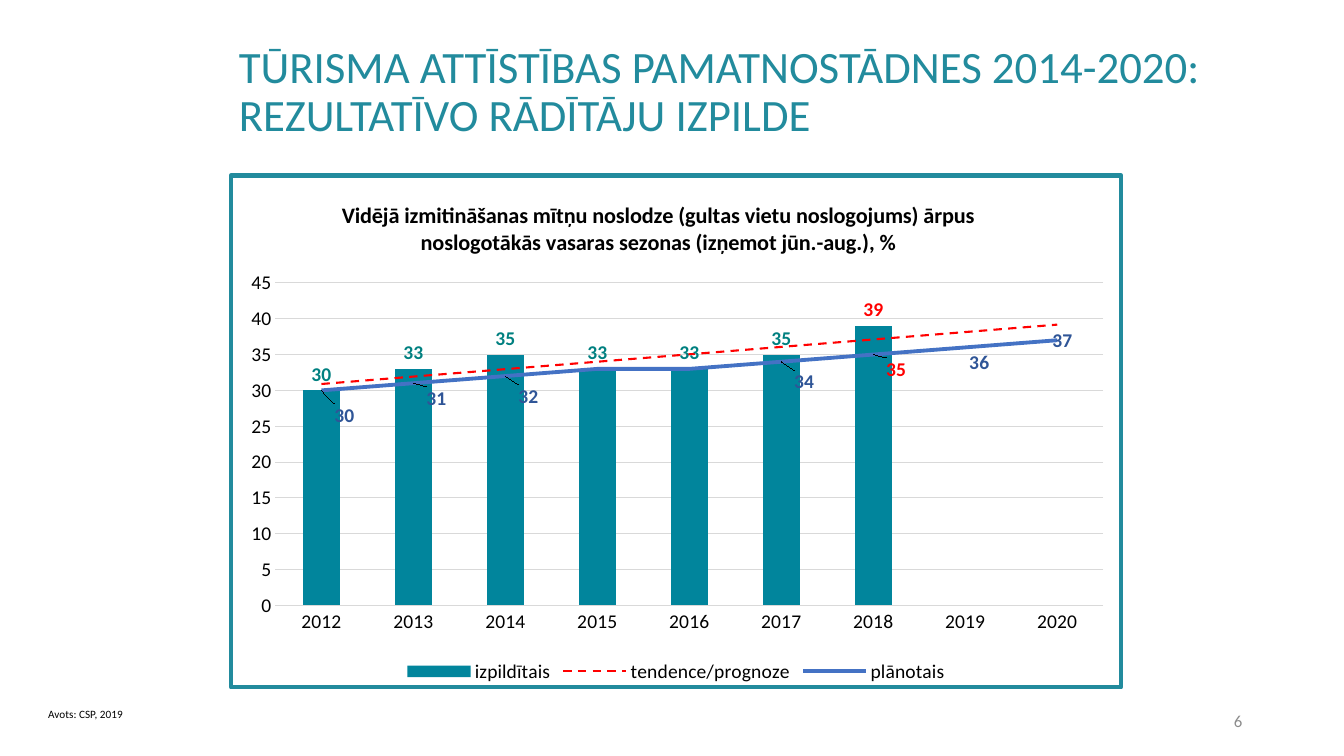
from lxml import etree
from pptx import Presentation
from pptx import util as u
from pptx.chart.data import CategoryChartData
from pptx.dml.color import RGBColor
from pptx.enum import chart as charts, text
from pptx.oxml import parse_xml
from pptx.oxml.ns import nsdecls, qn

PX = 9144  # EMU in one px, 100 px to the inch
FONT = "Calibri"
TEAL = "228B9D"
BLACK = "000000"
RED = "FF0000"
LABEL_BLUE = "2F5597"

TITLE = ("TŪRISMA ATTĪSTĪBAS PAMATNOSTĀDNES 2014-2020:\v"
         "REZULTATĪVO RĀDĪTĀJU IZPILDE")
CHART_TITLE = ("Vidējā izmitināšanas mītņu noslodze (gultas vietu noslogojums) "
               "ārpus noslogotākās vasaras sezonas (izņemot jūn.-aug.), %")
YEARS = [str(year) for year in range(2012, 2021)]
ACTUAL = [30, 33, 35, 33, 33, 35, 39, None, None]
PLANNED = [30, 31, 32, 33, 33, 34, 35, 36, 37]
# Label shift of each planned value, as a share of the chart; None hides it
PLANNED_SHIFTS = [(0.01, 0.05), (0.01, 0.03), (0.01, 0.04), None, None,
                  (0.01, 0.04), (0.01, 0.03), (0, 0.03), (-0.01, 0)]
FORECAST_YEAR = YEARS.index("2018")


def px(*lengths):
    return [u.Emu(length * PX) for length in lengths]


def color(hex_string):
    return RGBColor.from_string(hex_string)


def style_font(font, size, hex_string, bold=False):
    font.name = FONT
    font.size = u.Pt(size)
    font.bold = bold
    font.color.rgb = color(hex_string)


def add_text(slide, box, content, size, hex_string, anchor=text.MSO_ANCHOR.TOP,
             align=text.PP_ALIGN.LEFT, spacing=None):
    frame = slide.shapes.add_textbox(*px(*box)).text_frame
    frame.word_wrap = True
    frame.vertical_anchor = anchor
    frame.text = content
    paragraph = frame.paragraphs[0]
    paragraph.alignment = align
    paragraph.line_spacing = spacing
    for run in paragraph.runs:
        style_font(run.font, size, hex_string)


def chart_xml(tag, body):
    return parse_xml(f'<c:{tag} {nsdecls("c", "a")}>{body}</c:{tag}>')


def line_xml(hex_string, width, dash="solid"):
    return (f'<a:ln w="{u.Pt(width)}"><a:solidFill><a:srgbClr val="{hex_string}"/>'
            f'</a:solidFill><a:prstDash val="{dash}"/></a:ln>')


def remove_children(element, tag):
    for child in element.findall(qn(tag)):
        element.remove(child)


def layout(x, y, *size, edge=False, inner=False):
    """Manual layout in shares of the chart; edge means absolute, not shifted."""
    body = '<c:layoutTarget val="inner"/>' if inner else ""
    if edge:
        body += '<c:xMode val="edge"/><c:yMode val="edge"/>'
    for name, value in zip("xywh", (x, y, *size)):
        body += f'<c:{name} val="{value}"/>'
    return chart_xml("layout", f"<c:manualLayout>{body}</c:manualLayout>")


def move_to_line_plot(chart):
    """Turn the last column series into a line on the same axes."""
    bar_chart = chart.plots[0]._element
    series = bar_chart.findall(qn("c:ser"))[-1]
    remove_children(series, "c:invertIfNegative")
    line_chart = chart_xml("lineChart", '<c:grouping val="standard"/>'
                           '<c:varyColors val="0"/>')
    line_chart.append(series)
    etree.SubElement(line_chart, qn("c:marker")).set("val", "1")
    for axis in bar_chart.findall(qn("c:axId")):
        etree.SubElement(line_chart, qn("c:axId")).set("val", axis.get("val"))
    bar_chart.addnext(line_chart)


def add_trend(series, name):
    trend = chart_xml("trendline", f"<c:name>{name}</c:name><c:spPr>"
                      f'{line_xml(RED, 1.5, "dash")}</c:spPr>'
                      '<c:trendlineType val="linear"/><c:dispRSqr val="0"/>'
                      '<c:dispEq val="0"/>')
    series._element.find(qn("c:cat")).addprevious(trend)


def show_values(series, hex_string, position):
    labels = series.data_labels
    labels.show_value = True
    labels.position = position
    style_font(labels.font, 14, hex_string, True)


def style_point_label(series, index, hex_string, position, shift=None):
    label = series.points[index].data_label
    style_font(label.font, 14, hex_string, True)
    label.position = position
    if shift:
        element = series._element.find(qn("c:dLbls")).findall(qn("c:dLbl"))[-1]
        element.find(qn("c:idx")).addnext(layout(*shift))


def hide_point_label(series, index):
    hidden = chart_xml("dLbl", f'<c:idx val="{index}"/><c:delete val="1"/>')
    series._element.find(qn("c:dLbls")).findall(qn("c:dLbl"))[-1].addnext(hidden)


def style_axes(chart):
    for axis in (chart.category_axis, chart.value_axis):
        axis.major_tick_mark = charts.XL_TICK_MARK.NONE
        axis.minor_tick_mark = charts.XL_TICK_MARK.NONE
        style_font(axis.tick_labels.font, 14, BLACK)
    category_line = chart.category_axis.format.line
    category_line.color.rgb = color("D9D9D9")
    category_line.width = u.Pt(1)
    values = chart.value_axis
    values.format.line.fill.background()
    values.minimum_scale, values.maximum_scale, values.major_unit = 0, 45, 5
    values.tick_labels.number_format = "#,##0"
    values.tick_labels.number_format_is_linked = False
    grid = values.major_gridlines.format.line
    grid.color.rgb = color("D9D9D9")
    grid.width = u.Pt(0.75)


def style_frame(chart):
    """Title, legend, plot area and border."""
    title = chart.chart_title
    title.text_frame.text = CHART_TITLE
    style_font(title.text_frame.paragraphs[0].runs[0].font, 16, BLACK, True)
    remove_children(title._element, "c:layout")
    title._element.find(qn("c:tx")).addnext(layout(0.12, 0.04, edge=True))

    chart.has_legend = True
    chart.legend.position = charts.XL_LEGEND_POSITION.BOTTOM
    chart.legend.include_in_layout = False
    style_font(chart.legend.font, 14, BLACK)

    plot_area = chart._chartSpace.chart.plotArea
    remove_children(plot_area, "c:layout")
    plot_area.insert(0, layout(0.05, 0.21, 0.93, 0.63, edge=True, inner=True))
    border = chart_xml("spPr", "<a:noFill/>" + line_xml(TEAL, 3))
    chart._chartSpace.chart.addnext(border)


def add_occupancy_chart(slide, box):
    data = CategoryChartData(number_format="General")
    data.categories = YEARS
    data.add_series("izpildītais", ACTUAL)
    data.add_series("plānotais", PLANNED)
    chart = slide.shapes.add_chart(
        charts.XL_CHART_TYPE.COLUMN_CLUSTERED, *px(*box), data).chart
    style_font(chart.font, 14, BLACK)
    style_axes(chart)
    style_frame(chart)
    move_to_line_plot(chart)

    columns, line = chart.plots
    columns.gap_width = 150
    columns.vary_by_categories = False
    actual, planned = columns.series[0], line.series[0]

    above = charts.XL_LABEL_POSITION.OUTSIDE_END
    actual.format.fill.solid()
    actual.format.fill.fore_color.rgb = color("01859C")
    show_values(actual, "008080", above)
    style_point_label(actual, FORECAST_YEAR, RED, above)
    add_trend(actual, "tendence/prognoze")

    beside = charts.XL_LABEL_POSITION.RIGHT
    planned.smooth = False
    planned.marker.style = charts.XL_MARKER_STYLE.NONE
    planned.format.line.color.rgb = color("4472C4")
    planned.format.line.width = u.Pt(2.75)
    show_values(planned, LABEL_BLUE, beside)
    for index, shift in enumerate(PLANNED_SHIFTS):
        if shift is None:
            hide_point_label(planned, index)
        else:
            label_color = RED if index == FORECAST_YEAR else LABEL_BLUE
            style_point_label(planned, index, label_color, beside, shift)


def main():
    presentation = Presentation()
    presentation.slide_width, presentation.slide_height = px(1333, 750)
    slide = presentation.slides.add_slide(presentation.slide_layouts[6])
    add_text(slide, (942, 695, 300, 40), "6", 12, "8C8C8C",
             text.MSO_ANCHOR.MIDDLE, text.PP_ALIGN.RIGHT)
    add_occupancy_chart(slide, (227, 172, 887, 512))
    add_text(slide, (227, 0, 1150, 145), TITLE, 32, TEAL,
             text.MSO_ANCHOR.BOTTOM, spacing=0.9)
    add_text(slide, (38, 697, 160, 24), "Avots: CSP, 2019", 8, BLACK)
    presentation.save("out.pptx")


if __name__ == "__main__":
    main()
